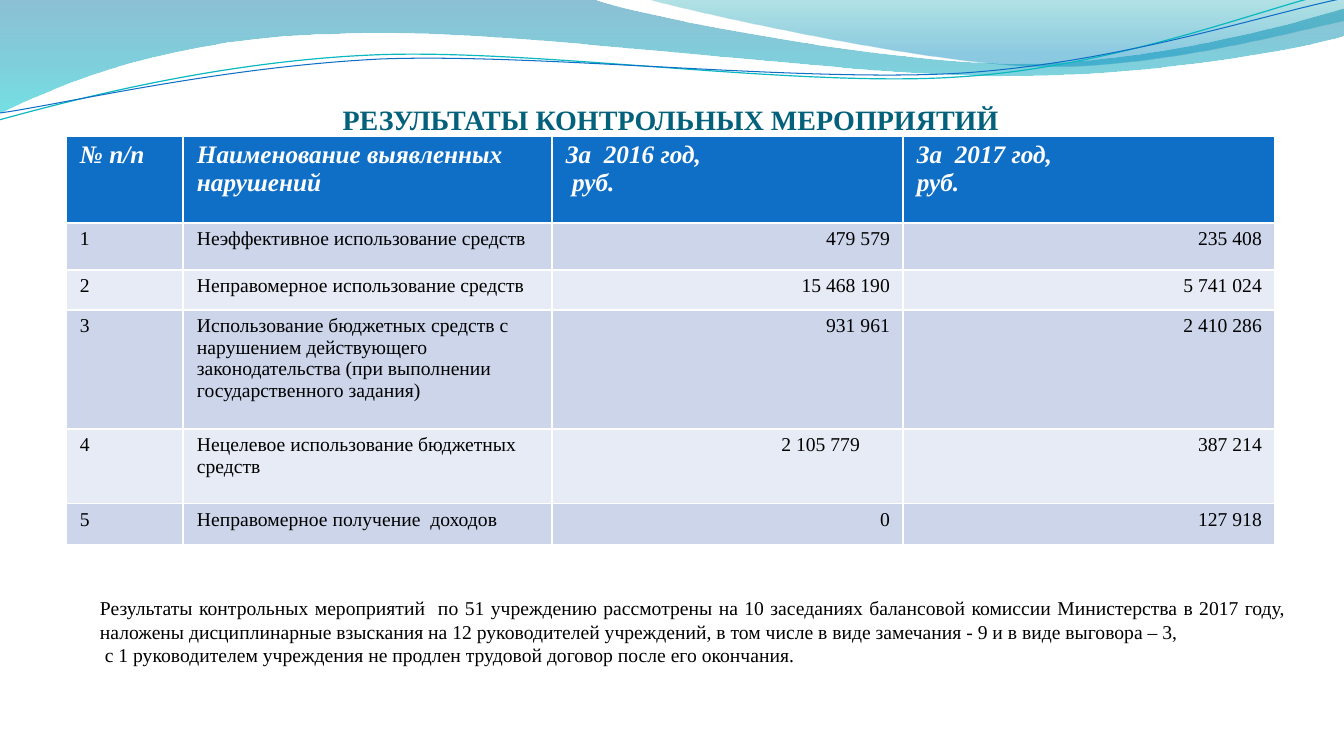
from lxml.etree import SubElement
from pptx import Presentation
from pptx.dml.color import RGBColor
from pptx.enum.text import MSO_ANCHOR, PP_ALIGN
from pptx.oxml.ns import qn
from pptx.util import Pt

TITLE = "РЕЗУЛЬТАТЫ КОНТРОЛЬНЫХ МЕРОПРИЯТИЙ"
ROWS = [
    ("№ п/п", "Наименование выявленных нарушений", "За  2016 год,\n руб.", "За  2017 год,\nруб."),
    ("1", "Неэффективное использование средств", "479 579", "235 408"),
    ("2", "Неправомерное использование средств", "15 468 190", "5 741 024"),
    ("3", "Использование бюджетных средств с нарушением действующего законодательства "
          "(при выполнении государственного задания)", "931 961", "2 410 286"),
    ("4", "Нецелевое использование бюджетных средств", "2 105 779", "387 214"),
    ("5", "Неправомерное получение  доходов", "0", "127 918"),
]
CONCLUSION = (
    "Результаты контрольных мероприятий  по 51 учреждению рассмотрены на 10 заседаниях "
    "балансовой комиссии Министерства в 2017 году, наложены дисциплинарные взыскания на "
    "12 руководителей учреждений, в том числе в виде замечания - 9 и в виде выговора – 3,\n"
    " с 1 руководителем учреждения не продлен трудовой договор после его окончания."
)
COLUMN_WIDTHS = (117, 369, 351, 372)
ROW_HEIGHTS = (87, 47, 40, 119, 75, 41)
INDENTED_CELL = (4, 2)

FONT = "Times New Roman"
WHITE = RGBColor(0xFF, 0xFF, 0xFF)
BLACK = RGBColor(0x00, 0x00, 0x00)
TITLE_TEAL = RGBColor(0x04, 0x61, 0x7B)
BLUE = RGBColor(0x0F, 0x6F, 0xC6)
CYAN = RGBColor(0x0A, 0xB8, 0xBF)
BAND_DARK = RGBColor(0xCC, 0xD5, 0xEA)
BAND_LIGHT = RGBColor(0xE7, 0xEB, 0xF5)

# Outlines in px: a pair is a straight step, six numbers are a Bézier step.
# Gradient stops: position, colour, opacity in percent.
WAVES = [
    ([(0, 0), (592, -1), (639, 17, 892, 64, 1019, 64), (1147, 64, 1288, 26, 1344, 9),
      (1346, 36), (1322, 44, 1169, 77, 1002, 76), (836, 76, 513, 28, 346, 34),
      (173, 36, 61, 84, -1, 114)],
     [(0, RGBColor(0x00, 0x74, 0xA1), 45), (1, RGBColor(0x00, 0xC6, 0xCF), 55)]),
    ([(644, -1), (685, 11, 916, 62, 1033, 66), (1150, 70, 1292, 32, 1344, 21), (1344, 0)],
     [(0, RGBColor(0x00, 0xA1, 0xA9), 30), (0.8, RGBColor(0x00, 0x8B, 0xBF), 45)]),
]
STRANDS = [
    ([(-1, 120), (65, 102, 213, 62, 372, 55), (531, 48, 796, 88, 958, 77),
      (1119, 67, 1262, 8, 1342, -10)], CYAN, 0.85),
    ([(0, 113), (64, 104, 220, 67, 381, 59), (541, 53, 802, 83, 963, 73),
      (1124, 62, 1265, 14, 1345, -2)], BLUE, 0.75),
]


def px(length):
    return round(length * 914400 / 100.8)


def bend(shape, outline):
    """Turn the straight segments of the Bézier steps into curves."""
    segments = list(shape._element.spPr.iter(qn("a:lnTo")))
    for segment, step in zip(segments, outline[1:]):
        if len(step) == 2:
            continue
        segment.remove(segment[0])
        curve = segment.getparent().makeelement(qn("a:cubicBezTo"), {})
        for x, y in zip(step[::2], step[1::2]):
            SubElement(curve, qn("a:pt"), x=str(px(x) - shape.left), y=str(px(y) - shape.top))
        segment.getparent().replace(segment, curve)


def add_outline(slide, outline, close):
    points = [(px(step[-2]), px(step[-1])) for step in outline]
    builder = slide.shapes.build_freeform(*points[0])
    builder.add_line_segments(points[1:], close=close)
    shape = builder.convert_to_shape()
    shape.shadow.inherit = False
    bend(shape, outline)
    return shape


def add_wave(slide, outline, stops):
    shape = add_outline(slide, outline, True)
    shape.line.fill.background()
    shape.fill.gradient()
    shape.fill.gradient_angle = 270
    for stop, (position, color, _) in zip(shape.fill.gradient_stops, stops):
        stop.position = position
        stop.color.rgb = color
    colors = shape._element.spPr.iter(qn("a:srgbClr"))
    for color, (_, _, opacity) in zip(colors, stops):
        SubElement(color, qn("a:alpha")).set("val", str(opacity * 1000))


def add_strand(slide, outline, color, width):
    shape = add_outline(slide, outline, False)
    shape.fill.background()
    shape.line.color.rgb = color
    shape.line.width = Pt(width)


def write(frame, text, size, color, alignment, bold=False, italic=False):
    frame.word_wrap = True
    frame.text = text
    for paragraph in frame.paragraphs:
        paragraph.alignment = alignment
        font = paragraph.font
        font.name, font.size, font.bold, font.italic = FONT, Pt(size), bold, italic
        font.color.rgb = color


def add_text(slide, left, top, width, height, *style, **emphasis):
    frame = slide.shapes.add_textbox(px(left), px(top), px(width), px(height)).text_frame
    write(frame, *style, **emphasis)
    return frame


def add_results_table(slide):
    table = slide.shapes.add_table(
        len(ROWS), len(COLUMN_WIDTHS), px(66), px(136),
        px(sum(COLUMN_WIDTHS)), px(sum(ROW_HEIGHTS))).table
    for column, width in zip(table.columns, COLUMN_WIDTHS):
        column.width = px(width)
    for row, height in zip(table.rows, ROW_HEIGHTS):
        row.height = px(height)
    for row, texts in enumerate(ROWS):
        for column, text in enumerate(texts):
            cell = table.cell(row, column)
            cell.margin_left = px(14)
            cell.margin_right = px(43 if (row, column) == INDENTED_CELL else 13)
            cell.margin_top = cell.margin_bottom = px(5)
            cell.fill.solid()
            if row == 0:
                cell.fill.fore_color.rgb = BLUE
                write(cell.text_frame, text, 18, WHITE, PP_ALIGN.LEFT, bold=True, italic=True)
            else:
                cell.fill.fore_color.rgb = BAND_DARK if row % 2 else BAND_LIGHT
                alignment = PP_ALIGN.RIGHT if column >= 2 else PP_ALIGN.LEFT
                write(cell.text_frame, text, 14, BLACK, alignment)


def main():
    presentation = Presentation()
    presentation.slide_width, presentation.slide_height = px(1344), px(756)
    slide = presentation.slides.add_slide(presentation.slide_layouts[6])
    for wave in WAVES:
        add_wave(slide, *wave)
    for strand in STRANDS:
        add_strand(slide, *strand)
    title = add_text(slide, 90, 40, 1161, 96, TITLE, 20, TITLE_TEAL, PP_ALIGN.CENTER, bold=True)
    title.vertical_anchor = MSO_ANCHOR.BOTTOM
    title.margin_left = title.margin_right = title.margin_bottom = 0
    add_results_table(slide)
    add_text(slide, 90, 591, 1206, 80, CONCLUSION, 14, BLACK, PP_ALIGN.JUSTIFY)
    presentation.save("out.pptx")


if __name__ == "__main__":
    main()
